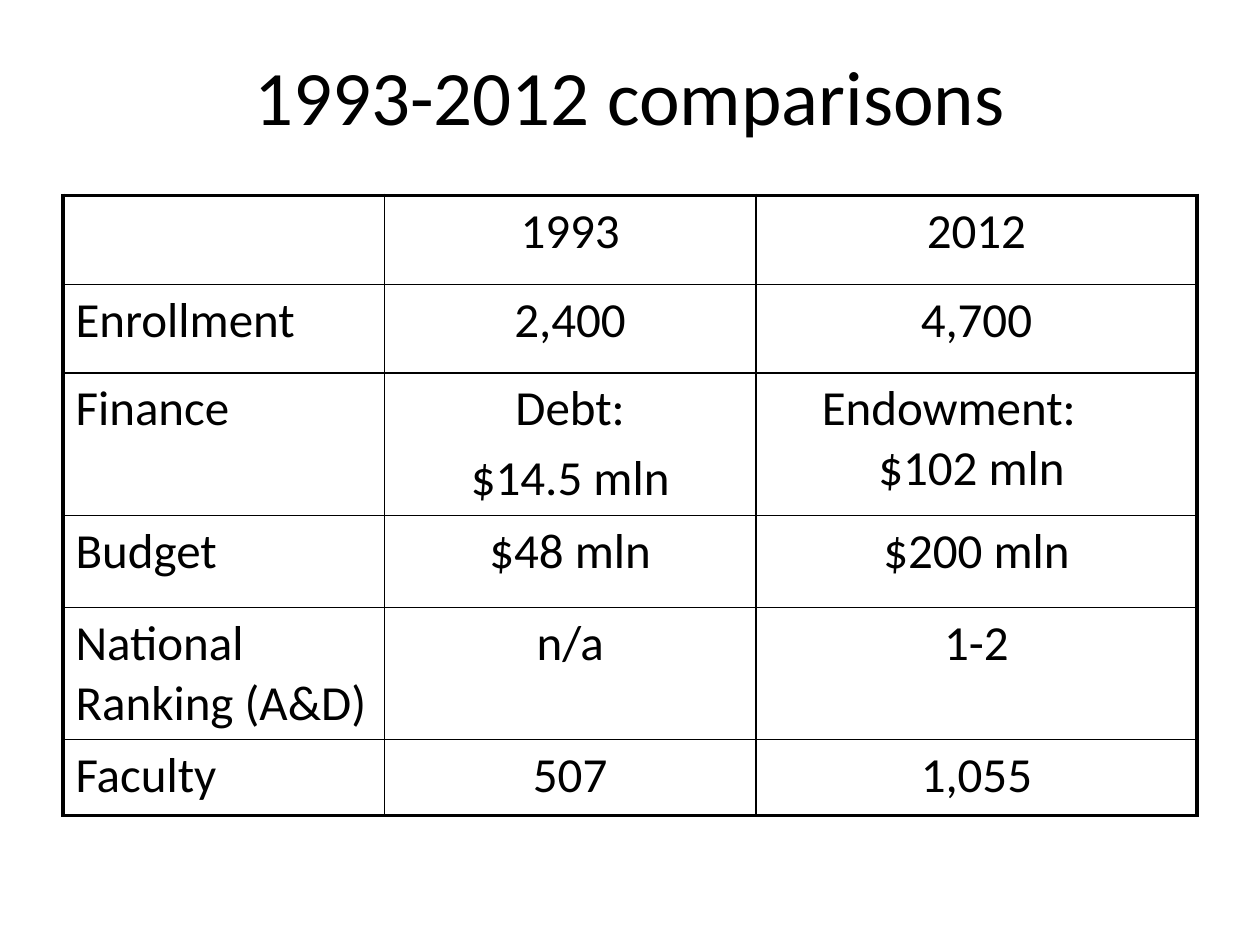
import pptx
import pptx.util
import pptx.dml.color
import pptx.enum.text
import pptx.oxml.ns
import lxml.etree

Inches = pptx.util.Inches
Pt = pptx.util.Pt
ALIGN = pptx.enum.text.PP_ALIGN
ANCHOR = pptx.enum.text.MSO_ANCHOR
qn = pptx.oxml.ns.qn

theme = {
    "ink": "000000",
    "font": "Calibri",
    "title_size": Pt(44),
    "cell_size": Pt(28),
    "outer_line": Pt(2.25),
    "inner_line": Pt(1),
}


def format_paragraph(paragraph, size, alignment):
    paragraph.alignment = alignment
    for name, value in {"name": theme["font"], "size": size, "bold": False}.items():
        setattr(paragraph.font, name, value)
    paragraph.font.color.rgb = pptx.dml.color.RGBColor.from_string(theme["ink"])


def set_borders(cell, widths):
    properties = cell._tc.get_or_add_tcPr()
    for position, (side, width) in enumerate(widths.items()):
        line = lxml.etree.Element(qn(f"a:ln{side}"), w=str(int(width)))
        fill = lxml.etree.SubElement(line, qn("a:solidFill"))
        lxml.etree.SubElement(fill, qn("a:srgbClr"), val=theme["ink"])
        properties.insert(position, line)


presentation = pptx.Presentation()
presentation.slide_width = Inches(10)
presentation.slide_height = Inches(7.5)
slide = presentation.slides.add_slide(presentation.slide_layouts[5])

title = slide.shapes.title
title_box = {"left": 0.5, "top": 0.3, "width": 9, "height": 0.91}
for name, value in title_box.items():
    setattr(title, name, Inches(value))
title.text_frame.text = "1993-2012 comparisons"
title.text_frame.vertical_anchor = ANCHOR.MIDDLE
format_paragraph(title.text_frame.paragraphs[0], theme["title_size"], ALIGN.CENTER)

rows = [
    ("", "1993", "2012"),
    ("Enrollment", "2,400", "4,700"),
    ("Finance", "Debt:\n$14.5 mln", "Endowment:\n$102 mln"),
    ("Budget", "$48 mln", "$200 mln"),
    ("National Ranking (A&D)", "n/a", "1-2"),
    ("Faculty", "507", "1,055"),
]
column_widths = [2.55, 2.95, 3.5]
row_heights = [0.71, 0.7, 1.13, 0.73, 1.05, 0.6]

table = slide.shapes.add_table(
    len(rows), len(column_widths), Inches(0.5), Inches(1.55),
    Inches(sum(column_widths)), Inches(sum(row_heights)),
).table
table.first_row = False
table.horz_banding = False
for column, width in zip(table.columns, column_widths):
    column.width = Inches(width)
for row, height in zip(table.rows, row_heights):
    row.height = Inches(height)

last_row, last_column = len(rows) - 1, len(column_widths) - 1
for row_index, texts in enumerate(rows):
    for column_index, text in enumerate(texts):
        cell = table.cell(row_index, column_index)
        cell.text = text
        cell.vertical_anchor = ANCHOR.TOP
        cell.fill.background()
        alignment = ALIGN.CENTER if column_index else ALIGN.LEFT
        for paragraph in cell.text_frame.paragraphs:
            format_paragraph(paragraph, theme["cell_size"], alignment)
        outer_edges = {
            "L": column_index == 0,
            "R": column_index == last_column,
            "T": row_index == 0,
            "B": row_index == last_row,
        }
        set_borders(cell, {
            side: theme["outer_line" if outer else "inner_line"]
            for side, outer in outer_edges.items()
        })

debt_amount = table.cell(2, 1).text_frame.paragraphs[1]
debt_amount.space_before = Pt(5.6)

endowment = table.cell(2, 2)
endowment.margin_right = Inches(0.54)
endowment_amount = endowment.text_frame.paragraphs[1]
endowment_amount._p.get_or_add_pPr().set("marL", str(Inches(0.36)))

presentation.save("out.pptx")
